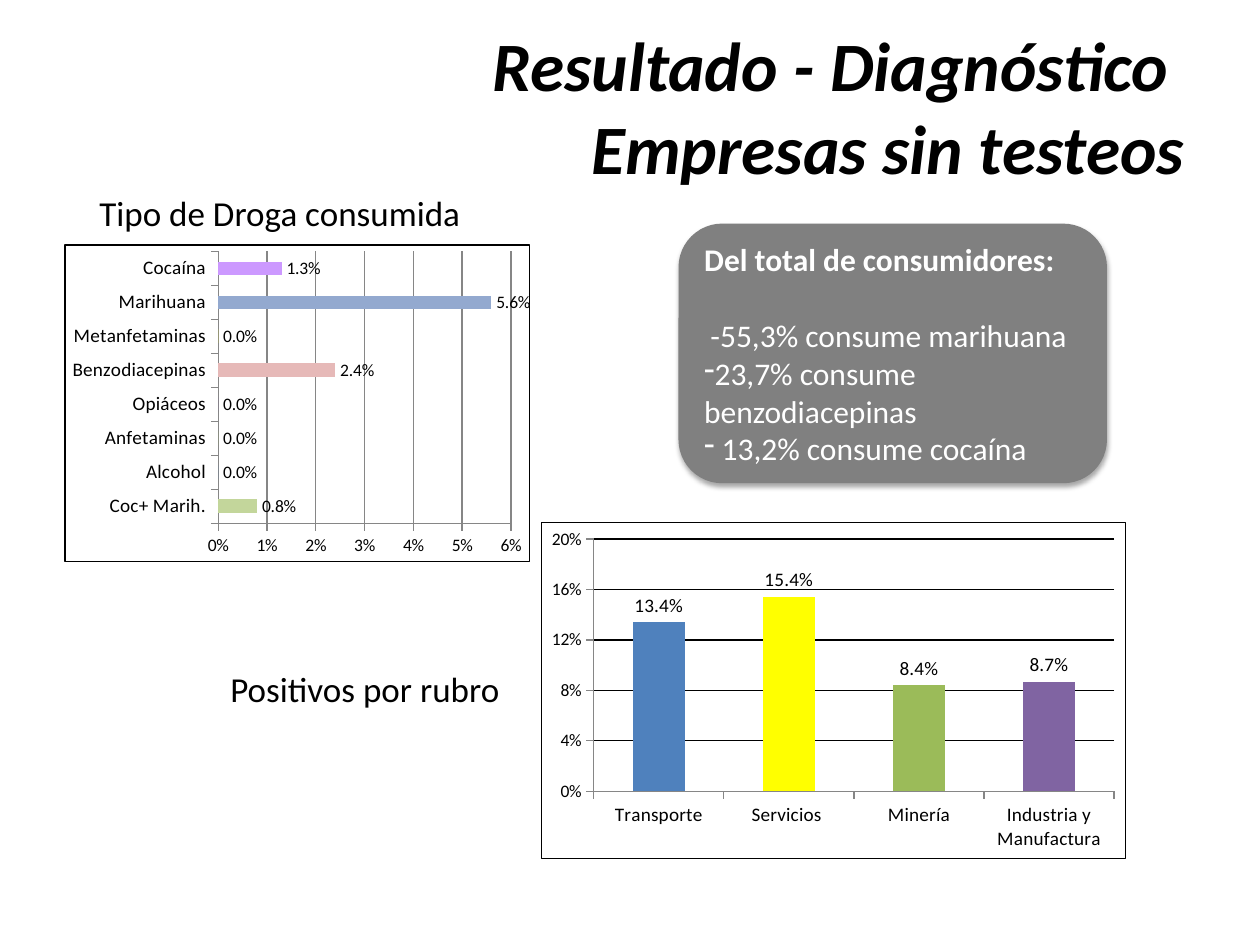
from lxml import etree
from pptx import Presentation
from pptx.chart.data import CategoryChartData
from pptx.dml.color import RGBColor
from pptx.enum import chart as c, shapes, text
from pptx.oxml import parse_xml
from pptx.oxml.ns import nsdecls, qn
from pptx.util import Inches, Pt

FONT = "Calibri"
COLORS = {
    "black": "000000", "white": "FFFFFF", "gray": "808080", "axis": "868686",
    "blue": "4F81BD", "yellow": "FFFF00", "green": "9BBB59", "purple": "8064A2",
    "lilac": "CC99FF", "steel": "93A9CF", "rose": "E6B9B8", "lime": "C3D69B",
}
TITLE = "Resultado - Diagnóstico \vEmpresas sin testeos"
LABELS = [
    ("Tipo de Droga consumida", (0.69, 1.47, 3.4, 0.55)),
    ("Positivos por rubro", (1.73, 5.25, 3.74, 0.55)),
]
FINDINGS = [
    ("Del total de consumidores:", False),
    ("-55,3% consume marihuana", False),
    ("23,7% consume benzodiacepinas", True),
    (" 13,2% consume cocaína", True),
]
CHARTS = [
    {
        "type": c.XL_CHART_TYPE.COLUMN_CLUSTERED,
        "box": (4.29, 4.14, 4.65, 2.68),
        "plot": {"x": 0.09, "y": 0.05, "w": 0.89, "h": 0.75},
        "bars": [
            ("Transporte", 0.134, "blue"),
            ("Servicios ", 0.154, "yellow"),
            ("Minería", 0.084, "green"),
            ("Industria y Manufactura", 0.087, "purple"),
        ],
        "maximum": 0.2, "step": 0.04, "grid": "black", "label_size": 11,
    },
    {
        "type": c.XL_CHART_TYPE.BAR_CLUSTERED,
        "box": (0.51, 1.94, 3.7, 2.52),
        "plot": {"x": 0.33, "y": 0.02, "w": 0.63, "h": 0.86},
        "bars": [
            ("Coc+ Marih.", 0.008, "lime"),
            ("Alcohol", 0, "blue"),
            ("Anfetaminas", 0, "green"),
            ("Opiáceos", 0, "purple"),
            ("Benzodiacepinas", 0.024, "rose"),
            ("Metanfetaminas", 0, "yellow"),
            ("Marihuana", 0.056, "steel"),
            ("Cocaína", 0.013, "lilac"),
        ],
        "maximum": 0.06, "step": 0.01, "grid": "axis", "label_size": 10,
    },
]


def rgb(name):
    return RGBColor.from_string(COLORS[name])


def style(font, size, color="black", bold=False, italic=False):
    font.name, font.size = FONT, Pt(size)
    font.bold, font.italic = bold, italic
    font.color.rgb = rgb(color)


def draw_line(line, color):
    line.color.rgb = rgb(color)
    line.width = Pt(0.75)


def add_text(slide, content, box, size, **look):
    frame = slide.shapes.add_textbox(*map(Inches, box)).text_frame
    frame.word_wrap = True
    paragraph = frame.paragraphs[0]
    paragraph.text = content
    style(paragraph.font, size, **look)
    return frame


def add_callout(slide):
    shape = slide.shapes.add_shape(
        shapes.MSO_SHAPE.ROUNDED_RECTANGLE, *map(Inches, (5.39, 1.78, 3.39, 2.05)))
    shape.fill.solid()
    shape.fill.fore_color.rgb = rgb("gray")
    draw_line(shape.line, "gray")
    shape.shadow.inherit = False
    effects = shape.element.spPr.find(qn("a:effectLst"))
    effects.append(parse_xml(
        f'<a:outerShdw {nsdecls("a")} blurRad="{Pt(3.1)}" dist="{Pt(1.8)}" dir="5400000">'
        f'<a:srgbClr val="{COLORS["black"]}"><a:alpha val="35000"/></a:srgbClr></a:outerShdw>'))
    frame = shape.text_frame
    frame.word_wrap = True
    frame.vertical_anchor = text.MSO_ANCHOR.MIDDLE
    for index, (content, bulleted) in enumerate(FINDINGS):
        paragraph = frame.paragraphs[0] if index == 0 else frame.add_paragraph()
        paragraph.text = content
        paragraph.alignment = text.PP_ALIGN.LEFT
        if index == 1:
            paragraph.space_before = Pt(22)
            paragraph._p.get_or_add_pPr().set("marL", str(Inches(0.05)))
        if bulleted:
            properties = paragraph._p.get_or_add_pPr()
            properties.set("marL", "0")
            properties.set("indent", "0")
            etree.SubElement(properties, qn("a:buChar")).set("char", "-")
        style(paragraph.font, 18, "white", bold=index == 0)


def place_plot(chart, plot):
    area = chart._chartSpace.chart.plotArea
    for layout in area.findall(qn("c:layout")):
        area.remove(layout)
    sizes = "".join(f'<c:{key} val="{value}"/>' for key, value in plot.items())
    area.insert(0, parse_xml(
        f'<c:layout {nsdecls("c")}><c:manualLayout><c:layoutTarget val="inner"/>'
        f'<c:xMode val="edge"/><c:yMode val="edge"/>{sizes}</c:manualLayout></c:layout>'))


def frame_chart(chart):
    chart._chartSpace.chart.addnext(parse_xml(
        f'<c:spPr {nsdecls("c", "a")}>'
        f'<a:solidFill><a:srgbClr val="{COLORS["white"]}"/></a:solidFill>'
        f'<a:ln w="{Pt(0.75)}"><a:solidFill><a:srgbClr val="{COLORS["black"]}"/>'
        f'</a:solidFill></a:ln></c:spPr>'))


def add_bars(slide, spec_data):
    names, values, colors = zip(*spec_data["bars"])
    data = CategoryChartData(number_format="0.0%")
    data.categories = names
    data.add_series("Series 1", values)
    chart = slide.shapes.add_chart(
        spec_data["type"], *map(Inches, spec_data["box"]), data).chart
    chart.has_legend = chart.has_title = False
    style(chart.font, 10)
    frame_chart(chart)
    place_plot(chart, spec_data["plot"])

    category_axis, value_axis = chart.category_axis, chart.value_axis
    for axis, size in ((category_axis, 11), (value_axis, 10)):
        style(axis.tick_labels.font, size)
        draw_line(axis.format.line, "axis")
        axis.major_tick_mark = c.XL_TICK_MARK.OUTSIDE
    category_axis.has_major_gridlines = False
    value_axis.minimum_scale = 0
    value_axis.maximum_scale = spec_data["maximum"]
    value_axis.major_unit = spec_data["step"]
    value_axis.tick_labels.number_format = "0%"
    value_axis.tick_labels.number_format_is_linked = False
    value_axis.has_major_gridlines = True
    draw_line(value_axis.major_gridlines.format.line, spec_data["grid"])

    plot = chart.plots[0]
    plot.gap_width = 150
    plot.vary_by_categories = False
    for index, color in enumerate(colors):
        fill = plot.series[0].points[index].format.fill
        fill.solid()
        fill.fore_color.rgb = rgb(color)
    plot.has_data_labels = True
    labels = plot.data_labels
    labels.show_value = True
    labels.number_format = "0.0%"
    labels.number_format_is_linked = False
    labels.position = c.XL_LABEL_POSITION.OUTSIDE_END
    style(labels.font, spec_data["label_size"])


def main():
    presentation = Presentation()
    presentation.slide_width, presentation.slide_height = Inches(10), Inches(7.5)
    slide = presentation.slides.add_slide(presentation.slide_layouts[6])
    title = add_text(slide, TITLE, (0.5, 0.21, 9, 1.25), 39.6, bold=True, italic=True)
    title.vertical_anchor = text.MSO_ANCHOR.MIDDLE
    title.paragraphs[0].alignment = text.PP_ALIGN.RIGHT
    for content, box in LABELS:
        add_text(slide, content, box, 20)
    add_callout(slide)
    for chart_data in CHARTS:
        add_bars(slide, chart_data)
    presentation.save("out.pptx")


if __name__ == "__main__":
    main()
